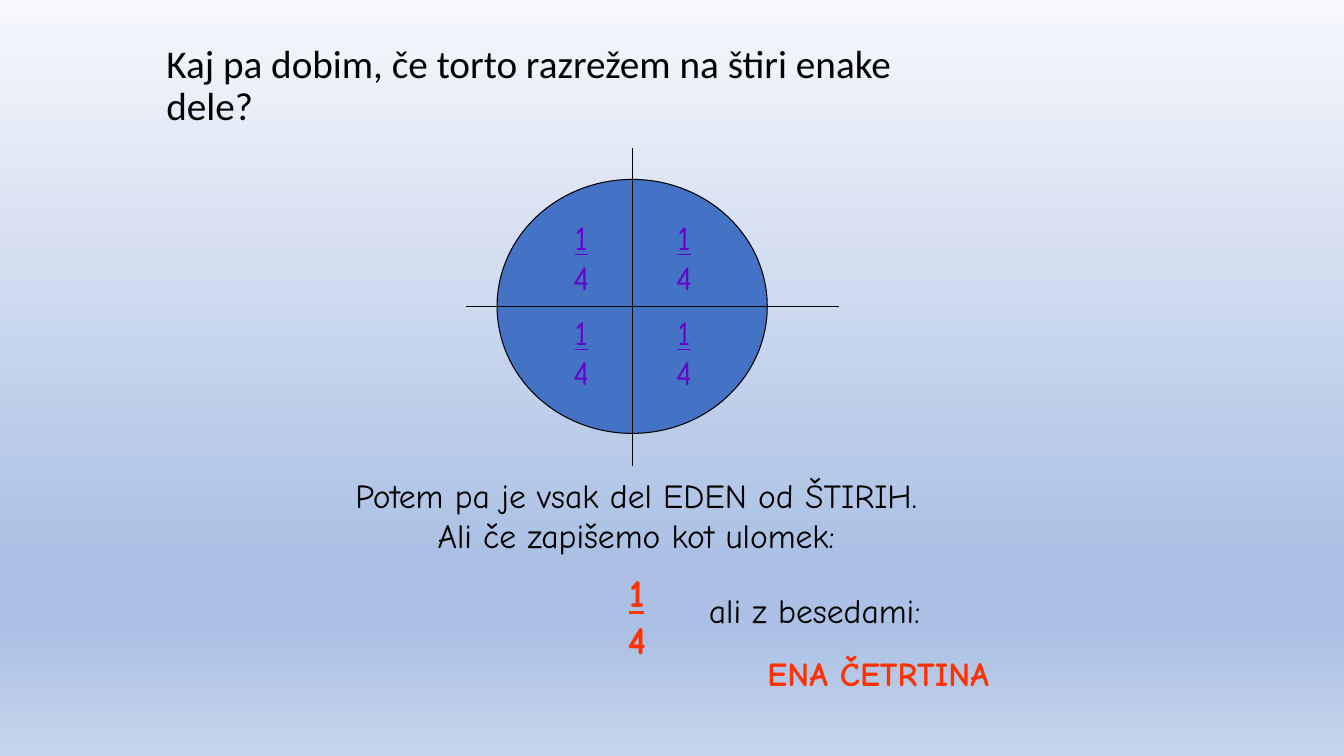
from lxml import etree
from pptx import Presentation
from pptx.dml.color import RGBColor
from pptx.enum.shapes import MSO_CONNECTOR, MSO_SHAPE
from pptx.enum.text import MSO_ANCHOR, PP_ALIGN
from pptx.oxml.ns import qn
from pptx.util import Inches, Pt

STRAIGHT = MSO_CONNECTOR.STRAIGHT
OVAL = MSO_SHAPE.OVAL
MIDDLE, BOTTOM = MSO_ANCHOR.MIDDLE, MSO_ANCHOR.BOTTOM
LEFT, CENTER = PP_ALIGN.LEFT, PP_ALIGN.CENTER

BLACK = RGBColor(0x00, 0x00, 0x00)
BLUE = RGBColor(0x44, 0x72, 0xC4)
PURPLE = RGBColor(0x66, 0x00, 0xCC)
RED = RGBColor(0xFF, 0x33, 0x00)
SKY = [(0, RGBColor(0xF6, 0xF8, 0xFC)), (74, RGBColor(0xAB, 0xC0, 0xE4)),
       (83, RGBColor(0xAB, 0xC0, 0xE4)), (100, RGBColor(0xC7, 0xD5, 0xED))]

TITLE_FONT, BODY_FONT = "Calibri", "Comic Neue"
FRACTION_W, FRACTION_H = 0.71, 0.82


def place(shape, x, y, w, h):
    shape.left, shape.top = Inches(x), Inches(y)
    shape.width, shape.height = Inches(w), Inches(h)


def style_runs(p, font, size, color, bold=False):
    for r in p.runs:
        r.font.name, r.font.size, r.font.bold = font, Pt(size), bold
        r.font.color.rgb = color


def add_background(s):
    fill = s.background.fill
    fill.gradient()
    fill.gradient_angle = 270
    stops = next(s.element.iter(qn("a:gsLst")))
    for stop in list(stops):
        stops.remove(stop)
    for percent, color in SKY:
        stop = etree.SubElement(stops, qn("a:gs"), pos=str(percent * 1000))
        etree.SubElement(stop, qn("a:srgbClr"), val=str(color))


def add_title(s, text, x, y, w, h):
    title = s.shapes.title
    place(title, x, y, w, h)
    tf = title.text_frame
    tf.text = text
    tf.word_wrap = True
    tf.vertical_anchor = MIDDLE
    p = tf.paragraphs[0]
    p.alignment, p.line_spacing = LEFT, 0.9
    style_runs(p, TITLE_FONT, 28, BLACK)


def add_text(s, text, x, y, w, h, size=24, color=BLACK, bold=False):
    box = s.shapes.add_textbox(Inches(x), Inches(y), Inches(w), Inches(h))
    tf = box.text_frame
    tf.text = text
    tf.word_wrap = True
    tf.vertical_anchor = BOTTOM
    p = tf.paragraphs[0]
    p.alignment = CENTER
    style_runs(p, BODY_FONT, size, color, bold)
    return p


def add_quarter(s, x, y, **style):
    p = add_text(s, "1\v4", x, y, FRACTION_W, FRACTION_H, **style)
    p.runs[0].font.underline = True


def add_cut(s, x1, y1, x2, y2):
    cut = s.shapes.add_connector(STRAIGHT, Inches(x1), Inches(y1),
                                 Inches(x2), Inches(y2))
    cut.line.color.rgb = BLACK
    cut.line.width = Pt(0.75)
    etree.SubElement(cut.element.spPr, qn("a:effectLst"))


def add_cake(s, x, y, w, h):
    cake = s.shapes.add_shape(OVAL, Inches(x), Inches(y), Inches(w), Inches(h))
    cake.shadow.inherit = False
    cake.fill.solid()
    cake.fill.fore_color.rgb = BLUE
    cake.line.color.rgb = BLACK
    cake.line.width = Pt(0.75)

    # Cuts through the centre
    cx, cy = x + w / 2, y + h / 2
    add_cut(s, cx, y - 0.31, cx, y + h + 0.32)
    add_cut(s, x - 0.31, cy, x + w + 0.71, cy)

    # One fraction in each quarter
    for row in range(2):
        for col in range(2):
            add_quarter(s, x + 0.48 + 1.02 * col, y + 0.4 + 0.94 * row,
                        color=PURPLE)


def add_explanation(s, x, y, w):
    add_text(s, "Potem pa je vsak del EDEN od ŠTIRIH.\vAli če zapišemo kot ulomek:",
             x, y, w, 1.34)
    add_quarter(s, x + 3.78, y + 1.58, size=28, color=RED, bold=True)
    add_text(s, "ali z besedami:", x + 4.17, y + 1.26, 3.46, FRACTION_H)
    add_text(s, "ENA ČETRTINA", x + 4.8, y + 1.89, 3.46, FRACTION_H,
             color=RED, bold=True)


def main():
    prs = Presentation()
    prs.slide_width, prs.slide_height = Inches(13.33), Inches(7.5)
    s = prs.slides.add_slide(prs.slide_layouts.get_by_name("Title Only"))
    add_background(s)
    add_title(s, "Kaj pa dobim, če torto razrežem na štiri enake dele?",
              1.55, 0.17, 8.26, 1.38)
    add_cake(s, 4.93, 1.78, 2.68, 2.52)
    add_explanation(s, 2.18, 4.22, 8.26)
    prs.save("out.pptx")


if __name__ == "__main__":
    main()
